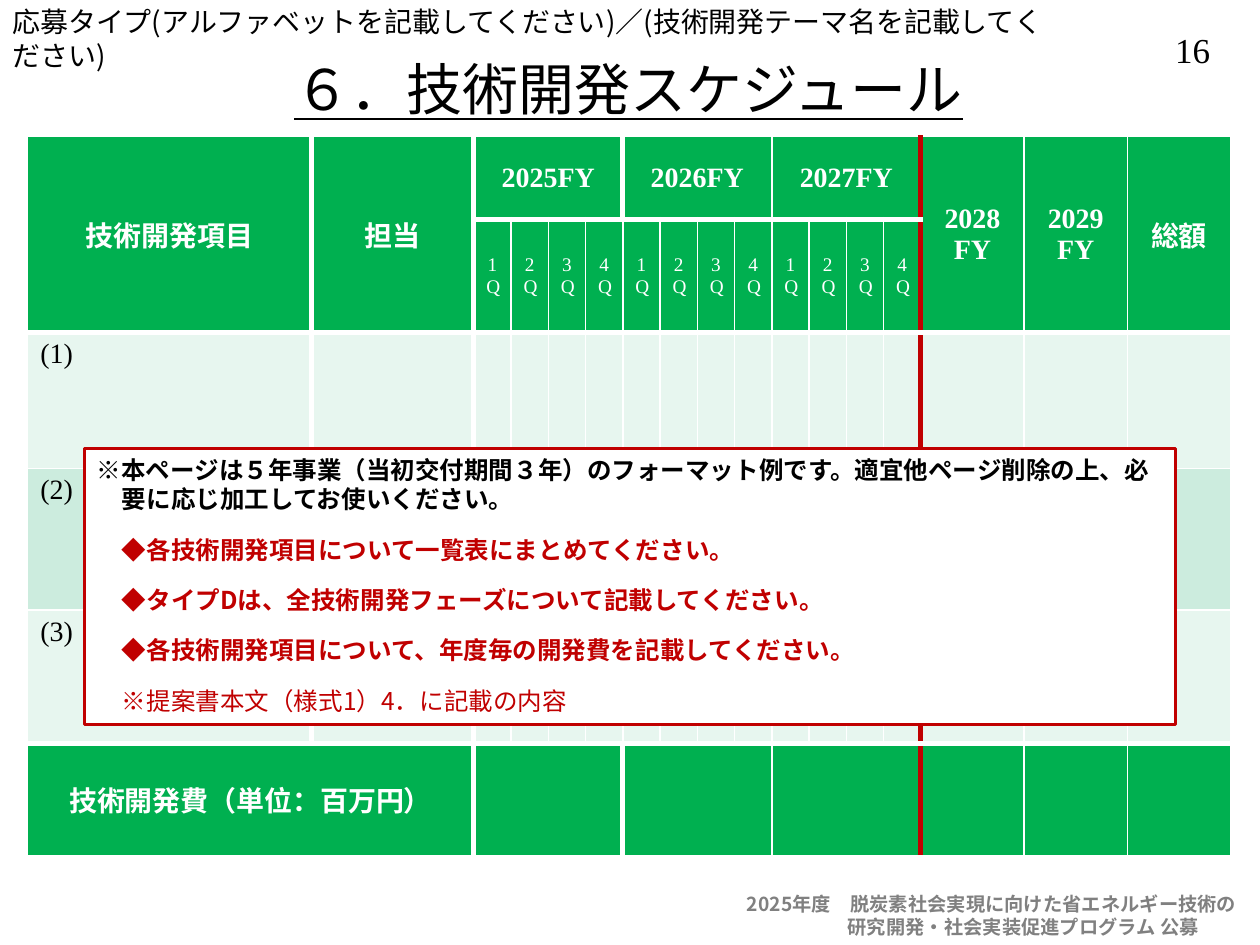
from lxml.etree import SubElement
from pptx import Presentation
from pptx.dml.color import RGBColor
from pptx.enum.shapes import MSO_SHAPE
from pptx.enum.text import MSO_ANCHOR, PP_ALIGN
from pptx.oxml.ns import qn
from pptx.util import Inches, Pt

GOTHIC, SERIF = "Noto Sans CJK JP", "Times New Roman"
GREEN, RED, WHITE, BLACK, GREY = "00B050", "C00000", "FFFFFF", "000000", "808080"
STRIPES = ["E7F6EF", "CCECDE", "E7F6EF"]
QUARTERS, FIRST_QUARTER, FIRST_LATER_YEAR = 12, 2, 14
ITEM_WIDTH, OWNER_WIDTH, YEAR_WIDTH, TABLE_WIDTH = 2.25, 1.29, 0.82, 9.55
QUARTER_WIDTH = (TABLE_WIDTH - ITEM_WIDTH - OWNER_WIDTH - 3 * YEAR_WIDTH) / QUARTERS
COLUMN_WIDTHS = [ITEM_WIDTH, OWNER_WIDTH] + [QUARTER_WIDTH] * QUARTERS + [YEAR_WIDTH] * 3
ROW_HEIGHTS = [0.66, 0.9, 1.08, 1.12, 1.06, 0.89]
TOTAL_ROW = 5


def color(value):
    """Turn a hex string into a colour."""
    return RGBColor.from_string(value)


def format_paragraph(paragraph, size, ink, bold=False, font=GOTHIC, align=PP_ALIGN.LEFT):
    """Give a paragraph its alignment and its runs their font."""
    paragraph.alignment = align
    for run in paragraph.runs:
        run.font.size, run.font.bold, run.font.name = Pt(size), bold, font
        run.font.color.rgb = color(ink)
        SubElement(run.font._element, qn("a:ea")).set("typeface", GOTHIC)


def indent(paragraph, left, first=0.0):
    """Set the left margin and first-line indent in inches."""
    properties = paragraph._p.get_or_add_pPr()
    properties.set("marL", str(Inches(left)))
    properties.set("indent", str(Inches(first)))


def add_text(slide, box, text, size, ink, wrap=True, **style):
    """Add a text box and return its paragraphs."""
    frame = slide.shapes.add_textbox(*map(Inches, box)).text_frame
    frame.word_wrap = wrap
    frame.text = text
    for paragraph in frame.paragraphs:
        format_paragraph(paragraph, size, ink, **style)
    return frame.paragraphs


def add_title(slide, text):
    """Fill and place the title placeholder."""
    title = slide.shapes.title
    title.left, title.top, title.width, title.height = map(Inches, (0.74, 0.35, 8.5, 0.7))
    title.text_frame.text = text
    title.text_frame.vertical_anchor = MSO_ANCHOR.MIDDLE
    paragraph = title.text_frame.paragraphs[0]
    format_paragraph(paragraph, 32, BLACK, align=PP_ALIGN.CENTER)
    paragraph.runs[0].font.underline = True


def add_border(cell, side, ink, width):
    """Draw one side of a table cell."""
    line = SubElement(cell._tc.get_or_add_tcPr(), qn(f"a:ln{side}"), w=str(Pt(width)))
    SubElement(SubElement(line, qn("a:solidFill")), qn("a:srgbClr"), val=ink)


def column_line(column, row):
    """Return colour and width of the vertical rule before a column."""
    if column == FIRST_LATER_YEAR:
        return RED, 3
    thick = column in (1, 2) or (column == 6 and row in (0, TOTAL_ROW))
    return WHITE, 3 if thick else 1


def row_line(row):
    """Return colour and width of the horizontal rule above a row."""
    return WHITE, 3 if row in (1, 2, TOTAL_ROW) else 1


def fill_cell(table, row, column, text="", span=(1, 1), size=16, ink=WHITE, bold=True,
              fill=GREEN, align=PP_ALIGN.CENTER, anchor=MSO_ANCHOR.MIDDLE):
    """Merge, rule, fill and write one table cell."""
    cell = table.cell(row, column)
    last_row, last_column = row + span[0], column + span[1]
    if span != (1, 1):
        cell.merge(table.cell(last_row - 1, last_column - 1))
    add_border(cell, "L", *column_line(column, row))
    add_border(cell, "R", *column_line(last_column, row))
    add_border(cell, "T", *row_line(row))
    add_border(cell, "B", *row_line(last_row))
    cell.fill.solid()
    cell.fill.fore_color.rgb = color(fill)
    cell.vertical_anchor = anchor
    cell.text_frame.text = text
    for paragraph in cell.text_frame.paragraphs:
        format_paragraph(paragraph, size, ink, bold, SERIF, align)


def add_schedule(slide):
    """Add the schedule table with its header, item and total rows."""
    frame = slide.shapes.add_table(len(ROW_HEIGHTS), len(COLUMN_WIDTHS), Inches(0.22),
                                   Inches(1.08), Inches(TABLE_WIDTH), Inches(sum(ROW_HEIGHTS)))
    table = frame.table
    for column, width in zip(table.columns, COLUMN_WIDTHS):
        column.width = Inches(width)
    for row, height in zip(table.rows, ROW_HEIGHTS):
        row.height = Inches(height)
    for column, text in enumerate(["技術開発項目", "担当"]):
        fill_cell(table, 0, column, text, (2, 1))
    for year in range(3):
        column = FIRST_QUARTER + 4 * year
        fill_cell(table, 0, column, f"{2025 + year}FY", (1, 4))
        fill_cell(table, TOTAL_ROW, column, span=(1, 4))
    for quarter in range(QUARTERS):
        fill_cell(table, 1, FIRST_QUARTER + quarter, f"{quarter % 4 + 1}Q", size=11, bold=False)
    for column, text in enumerate(["2028\nFY", "2029\nFY", "総額"], FIRST_LATER_YEAR):
        fill_cell(table, 0, column, text, (2, 1))
        fill_cell(table, TOTAL_ROW, column)
    for number, stripe in enumerate(STRIPES, 1):
        for column in range(len(COLUMN_WIDTHS)):
            fill_cell(table, number + 1, column, "" if column else f"({number})", ink=BLACK,
                      bold=False, fill=stripe, align=PP_ALIGN.LEFT, anchor=MSO_ANCHOR.TOP)
    fill_cell(table, TOTAL_ROW, 0, "技術開発費（単位：百万円）", (1, 2))


def add_guidance(slide, heading, points, remark):
    """Add the framed guidance note over the table."""
    shape = slide.shapes.add_shape(MSO_SHAPE.RECTANGLE, *map(Inches, (0.67, 3.56, 8.66, 2.19)))
    shape.shadow.inherit = False
    shape.fill.solid()
    shape.fill.fore_color.rgb = color(WHITE)
    shape.line.color.rgb = color(RED)
    shape.line.width = Pt(1.5)
    frame = shape.text_frame
    frame.word_wrap = True
    frame.vertical_anchor = MSO_ANCHOR.TOP
    frame.text = "\n".join([heading, *points, remark])
    first, *others = frame.paragraphs
    format_paragraph(first, 14, BLACK, True)
    indent(first, 0.2, -0.2)
    for paragraph in others:
        format_paragraph(paragraph, 14, RED, paragraph.text != remark)
        indent(paragraph, 0.2)
        paragraph.space_before = Pt(12)


def main():
    """Build the schedule slide and save it."""
    presentation = Presentation()
    presentation.slide_width, presentation.slide_height = Inches(10), Inches(7.5)
    slide = presentation.slides.add_slide(presentation.slide_layouts[5])
    add_text(slide, (9.14, 0.18, 0.65, 0.43), "16", 20, BLACK, wrap=False,
             font=SERIF, align=PP_ALIGN.CENTER)
    add_text(slide, (0, -0.01, 8.4, 0.37),
             "応募タイプ(アルファベットを記載してください)／(技術開発テーマ名を記載してください)", 16, BLACK)
    footer = add_text(slide, (5.83, 7.03, 4.17, 0.47),
                      "2025年度　脱炭素社会実現に向けた省エネルギー技術の\n"
                      "研究開発・社会実装促進プログラム 公募", 11, GREY, bold=True)
    indent(footer[1], 0.8)
    add_title(slide, "６．技術開発スケジュール")
    add_schedule(slide)
    add_guidance(
        slide,
        "※本ページは５年事業（当初交付期間３年）のフォーマット例です。"
        "適宜他ページ削除の上、必要に応じ加工してお使いください。",
        ["◆各技術開発項目について一覧表にまとめてください。",
         "◆タイプDは、全技術開発フェーズについて記載してください。",
         "◆各技術開発項目について、年度毎の開発費を記載してください。"],
        "※提案書本文（様式1）4．に記載の内容")
    presentation.save("out.pptx")


if __name__ == "__main__":
    main()
